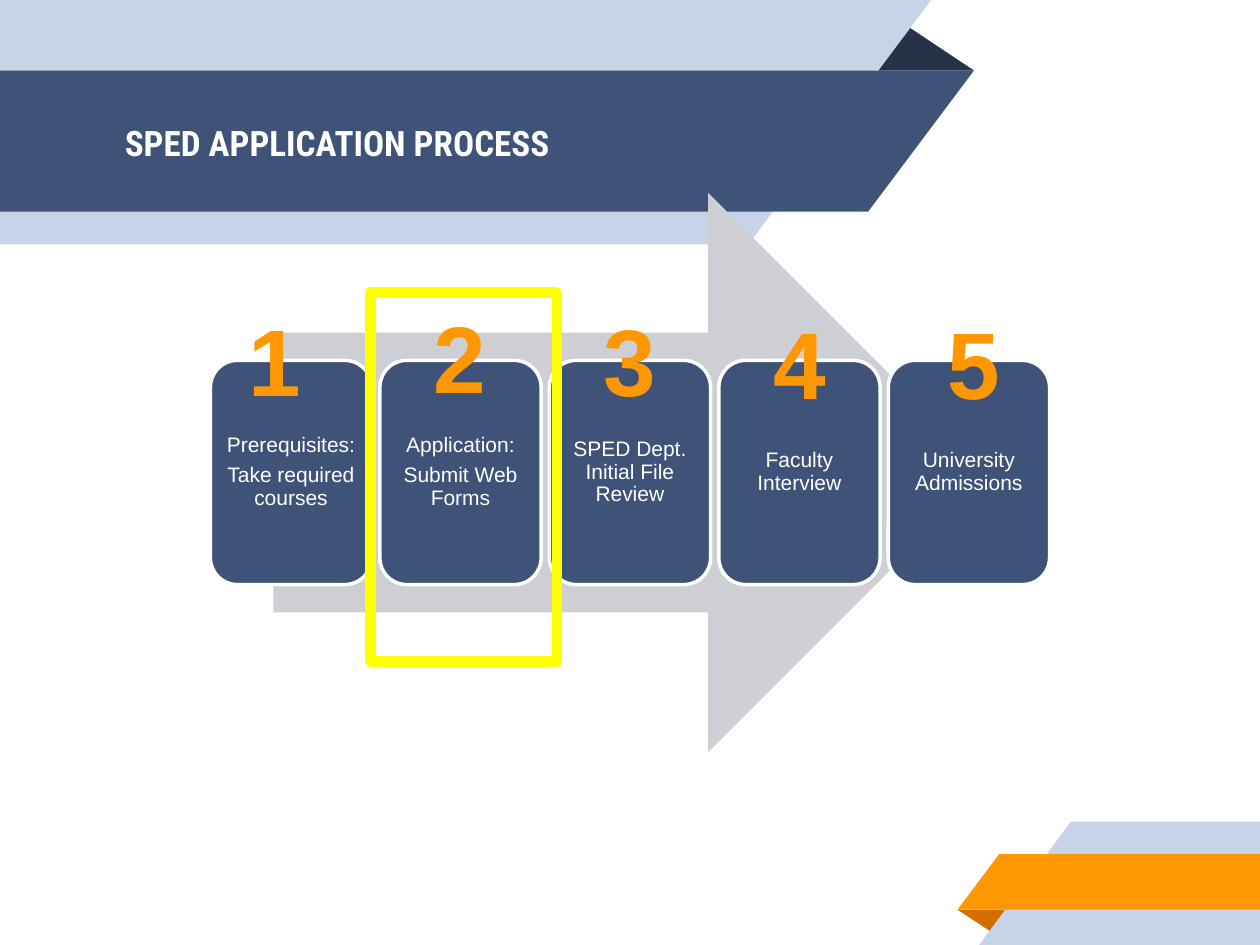
"""Build the SPED application process slide."""
from dataclasses import dataclass

from pptx import Presentation
from pptx.dml.color import RGBColor
from pptx.enum.shapes import MSO_SHAPE
from pptx.enum.text import MSO_ANCHOR, MSO_AUTO_SIZE, PP_ALIGN
from pptx.util import Inches, Pt

ARROW = MSO_SHAPE.RIGHT_ARROW
ROUND = MSO_SHAPE.ROUNDED_RECTANGLE
RECT = MSO_SHAPE.RECTANGLE
MIDDLE = MSO_ANCHOR.MIDDLE
TOP = MSO_ANCHOR.TOP
CENTER = PP_ALIGN.CENTER
LEFT = PP_ALIGN.LEFT
GROW = MSO_AUTO_SIZE.SHAPE_TO_FIT_TEXT
FIXED = MSO_AUTO_SIZE.NONE


@dataclass
class Theme:
    white: str = "FFFFFF"
    navy: str = "3F5378"
    dark: str = "263248"
    pale: str = "C7D3E6"
    orange: str = "FF9800"
    rust: str = "D26F00"
    gray: str = "CDCFD5"
    yellow: str = "FFFF00"
    head: str = "Roboto Condensed"
    body: str = "Arial"
    title: int = 20
    step: int = 12
    digit: int = 54


def paint(shape, fill=None, line=None, width=0):
    shape.shadow.inherit = False
    if fill:
        shape.fill.solid()
        shape.fill.fore_color.rgb = RGBColor.from_string(fill)
    else:
        shape.fill.background()
    if line:
        shape.line.color.rgb = RGBColor.from_string(line)
        shape.line.width = Pt(width)
    else:
        shape.line.fill.background()


def write(shape, lines, font, align, frame, space=1.0):
    text = shape.text_frame
    for name, value in frame.items():
        setattr(text, name, value)
    text.text = "\n".join(lines)
    for i, para in enumerate(text.paragraphs):
        para.alignment = align
        para.line_spacing = space
        para.space_before = Pt(4.2 if i else 0)
        para.font.color.rgb = RGBColor.from_string(font["color"])
        for name in ("name", "size", "bold"):
            setattr(para.font, name, font[name])


theme = Theme()
deck = Presentation()
deck.slide_width, deck.slide_height = Inches(10), Inches(7.5)
slide = deck.slides.add_slide(deck.slide_layouts[5])
shapes = slide.shapes

ribbons = [
    (theme.dark, [(6.88, 0.56), (7.16, 0.18), (7.73, 0.56)]),
    (theme.pale, [(0, 0), (7.39, 0), (5.94, 1.94), (0, 1.94)]),
    (theme.navy, [(0, 0.56), (7.73, 0.56), (6.89, 1.68), (0, 1.68)]),
    (theme.rust, [(7.6, 7.22), (8.03, 7.22), (7.89, 7.41)]),
    (theme.pale, [(8.5, 6.52), (10, 6.52), (10, 7.5), (7.77, 7.5)]),
    (theme.orange, [(7.93, 6.78), (10, 6.78), (10, 7.22), (7.6, 7.22)]),
]
for color, points in ribbons:
    spots = [(Inches(x), Inches(y)) for x, y in points]
    pen = shapes.build_freeform(*spots[0])
    pen.add_line_segments(spots[1:], close=True)
    paint(pen.convert_to_shape(), color)

title = shapes.title
shapes.element.append(title.element)
place = {"left": 0.89, "top": 0.57, "width": 5.75, "height": 1.12}
for name, value in place.items():
    setattr(title, name, Inches(value))
pad = Inches(0.1)
thin = Inches(0.05)
frame = {"margin_left": pad, "margin_right": pad, "margin_top": pad,
         "margin_bottom": pad, "vertical_anchor": MIDDLE,
         "word_wrap": True, "auto_size": FIXED}
font = {"name": theme.head, "size": Pt(theme.title), "bold": True,
        "color": theme.white}
write(title, ["SPED APPLICATION PROCESS"], font, LEFT, frame)

arrow = shapes.add_shape(ARROW, Inches(2.17), Inches(1.53),
                         Inches(5.67), Inches(4.44))
paint(arrow, theme.gray)

steps = [
    ["Prerequisites:", "Take required courses"],
    ["Application:", "Submit Web Forms"],
    ["SPED Dept. Initial File Review"],
    ["Faculty Interview"],
    ["University Admissions"],
]
frame |= {"margin_left": thin, "margin_right": thin,
          "margin_top": thin, "margin_bottom": thin}
font = {"name": theme.body, "size": Pt(theme.step), "bold": False,
        "color": theme.white}
for i, lines in enumerate(steps):
    card = shapes.add_shape(ROUND, Inches(1.67 + 1.345 * i), Inches(2.86),
                            Inches(1.28), Inches(1.78))
    card.adjustments[0] = 0.167
    paint(card, theme.navy, theme.white, 2)
    write(card, lines, font, CENTER, frame, 0.9)

spots = [(1.87, 2.35), (3.34, 2.32), (4.69, 2.35), (6.04, 2.37), (7.42, 2.37)]
frame |= {"margin_left": pad, "margin_right": pad,
          "vertical_anchor": TOP, "auto_size": GROW}
font |= {"size": Pt(theme.digit), "bold": True, "color": theme.orange}
for num, (x, y) in enumerate(spots, 1):
    label = shapes.add_textbox(Inches(x), Inches(y), Inches(0.62), Inches(1.01))
    write(label, [str(num)], font, CENTER, frame)

focus = shapes.add_shape(RECT, Inches(2.94), Inches(2.32),
                         Inches(1.48), Inches(2.93))
paint(focus, line=theme.yellow, width=6)

deck.save("out.pptx")
